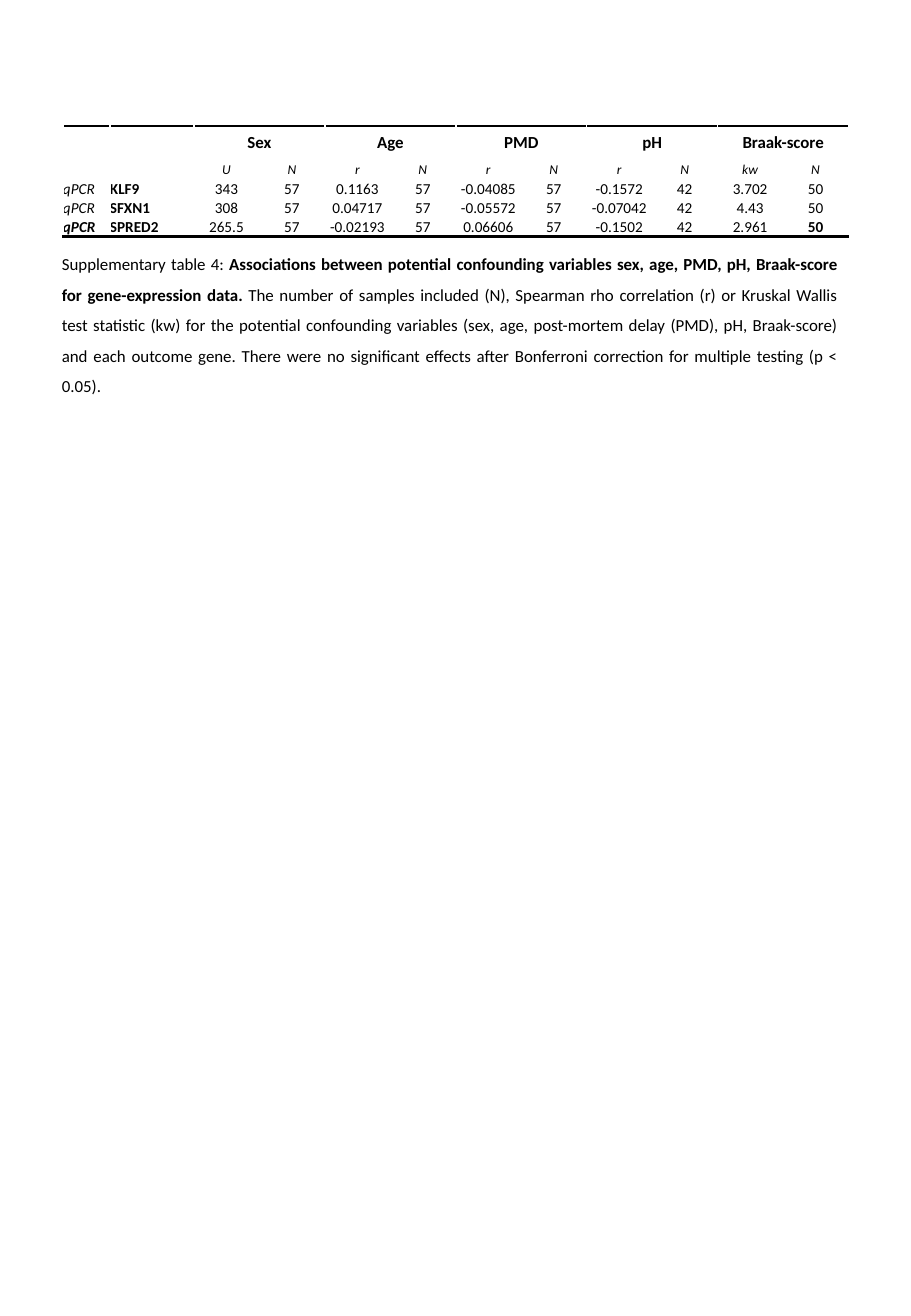
from lxml import etree
from pptx import Presentation
from pptx import util as u
from pptx.dml.color import RGBColor
from pptx.enum import text
from pptx.oxml import ns

SCALE = 7526
COLOURS = {"ink": "000000", "paper": "FFFFFF"}
FONT = "Calibri"
COLUMNS = [47, 84] + [65, 66] * 5
ROWS = [34, 20, 19, 19, 19]
VARIABLES = ["Sex", "Age", "PMD", "pH", "Braak-score"]
STATISTICS = ["U", "r", "r", "r", "kw"]
SAMPLES = ["57", "57", "57", "42", "50"]
GENES = {
    "KLF9": ["343", "0.1163", "-0.04085", "-0.1572", "3.702"],
    "SFXN1": ["308", "0.04717", "-0.05572", "-0.07042", "4.43"],
    "SPRED2": ["265.5", "-0.02193", "0.06606", "-0.1502", "2.961"],
}
CAPTION = [
    ("Supplementary table 4: ", False),
    ("Associations between potential confounding variables sex, age, PMD, pH, "
     "Braak-score for gene-expression data.", True),
    (" The number of samples included (N), Spearman rho correlation (r) or "
     "Kruskal Wallis test statistic (kw) for the potential confounding variables "
     "(sex, age, post-mortem delay (PMD), pH, Braak-score) and each outcome gene. "
     "There were no significant effects after Bonferroni correction for multiple "
     "testing (p < 0.05).", False),
]


def px(length):
    return u.Emu(length * SCALE)


def assign(target, values):
    for name, value in values.items():
        setattr(target, name, value)


def add_span(para, words, size, bold=False, italic=False):
    span = para.add_run()
    span.text = words
    assign(span.font, {"name": FONT, "size": u.Pt(size), "bold": bold, "italic": italic})
    span.font.color.rgb = RGBColor.from_string(COLOURS["ink"])


def pair_up(firsts, seconds):
    return [value for pair in zip(firsts, seconds) for value in pair]


def add_rule(cell, tag):
    line = etree.Element(ns.qn(tag), w=str(u.Pt(2)))
    fill = etree.SubElement(line, ns.qn("a:solidFill"))
    etree.SubElement(fill, ns.qn("a:srgbClr"), val=COLOURS["ink"])
    cell._tc.get_or_add_tcPr().insert(0, line)


def shrink_empty(para):
    etree.SubElement(para._p, ns.qn("a:endParaRPr"), sz="800")


def fill_cell(cell, words, style, centred):
    assign(cell, {
        "margin_left": 0, "margin_right": 0, "margin_top": 0, "margin_bottom": 0,
        "vertical_anchor": text.MSO_ANCHOR.MIDDLE,
    })
    cell.fill.solid()
    cell.fill.fore_color.rgb = RGBColor.from_string(COLOURS["paper"])
    para = cell.text_frame.paragraphs[0]
    para.alignment = text.PP_ALIGN.CENTER if centred else text.PP_ALIGN.LEFT
    if words:
        add_span(para, words, **style)
    else:
        shrink_empty(para)


def cell_style(row, column):
    if row == 0:
        return {"size": 10, "bold": True}
    if row == 1:
        return {"size": 8, "italic": True}
    emphasised = row == len(ROWS) - 1 and column in (0, len(COLUMNS) - 1)
    return {"size": 9, "bold": column == 1 or emphasised, "italic": column == 0}


def add_association_table(page):
    content = [
        ["", ""] + pair_up(VARIABLES, [""] * len(VARIABLES)),
        ["", ""] + pair_up(STATISTICS, ["N"] * len(STATISTICS)),
    ]
    content += [["qPCR", gene] + pair_up(values, SAMPLES) for gene, values in GENES.items()]
    frame = page.shapes.add_table(
        len(ROWS), len(COLUMNS), px(63), px(126), px(sum(COLUMNS)), px(sum(ROWS)))
    table = frame.table
    assign(table, {"first_row": False, "horz_banding": False})
    for column, width in zip(table.columns, COLUMNS):
        column.width = px(width)
    for row, height in zip(table.rows, ROWS):
        row.height = px(height)
    for row, line in enumerate(content):
        for column, words in enumerate(line):
            fill_cell(table.cell(row, column), words, cell_style(row, column), column > 1)
    for column in range(len(COLUMNS)):
        add_rule(table.cell(0, column), "a:lnT")
        add_rule(table.cell(len(ROWS) - 1, column), "a:lnB")
    for column in range(2, len(COLUMNS), 2):
        table.cell(0, column).merge(table.cell(0, column + 1))


def add_caption(page):
    box = page.shapes.add_textbox(px(50), px(238), px(799), px(163))
    assign(box.text_frame, {
        "word_wrap": True, "auto_size": text.MSO_AUTO_SIZE.SHAPE_TO_FIT_TEXT})
    para = box.text_frame.paragraphs[0]
    assign(para, {
        "alignment": text.PP_ALIGN.JUSTIFY, "line_spacing": 1.5, "space_after": u.Pt(8)})
    for words, bold in CAPTION:
        add_span(para, words, 10, bold)


def main():
    deck = Presentation()
    assign(deck, {"slide_width": px(911), "slide_height": px(1316)})
    page = deck.slides.add_slide(deck.slide_layouts[6])
    add_association_table(page)
    add_caption(page)
    deck.save("out.pptx")


if __name__ == "__main__":
    main()
